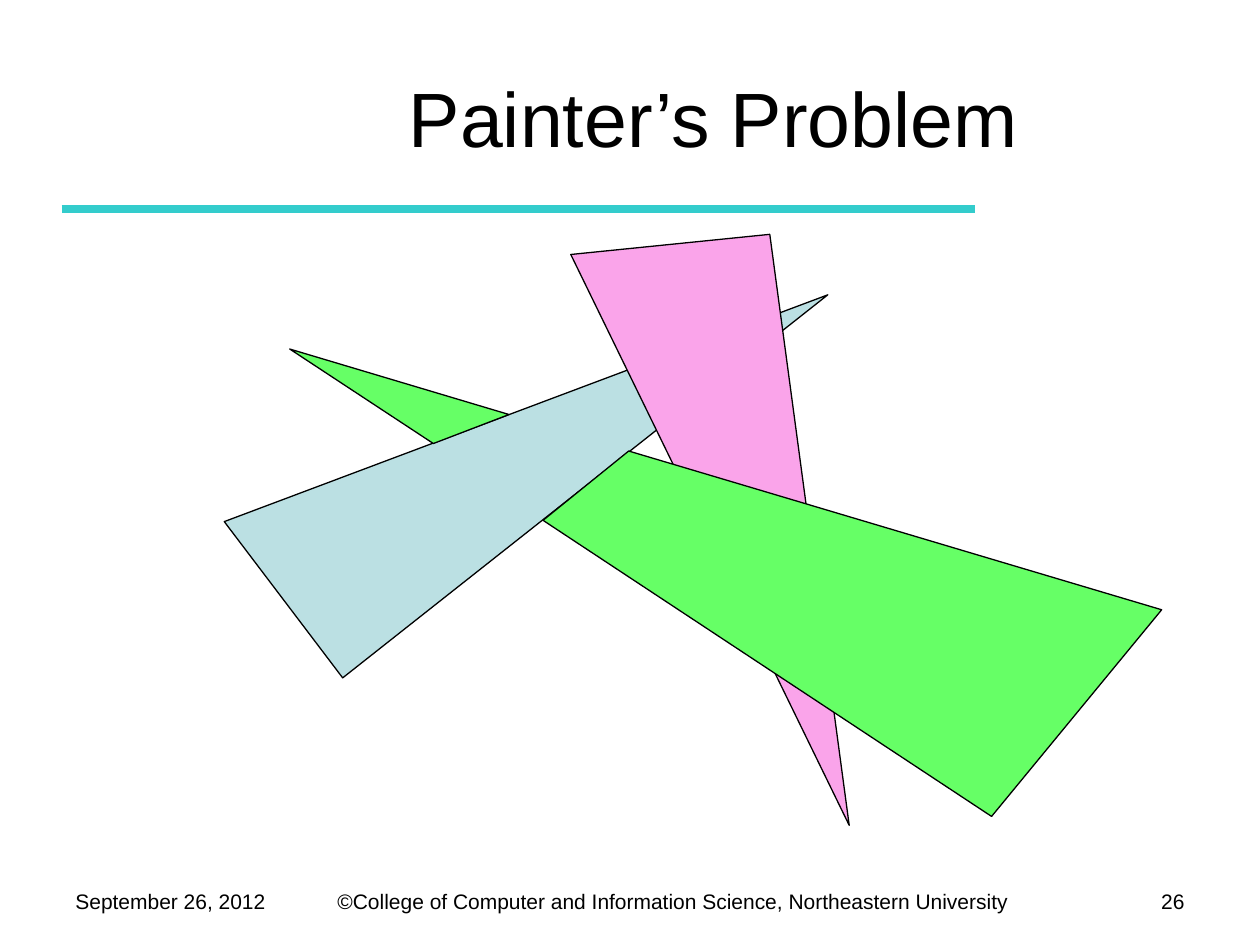
from dataclasses import dataclass

from pptx import Presentation
from pptx import util as u
from pptx.dml.color import RGBColor
from pptx.enum import shapes, text
from pptx.oxml.ns import qn
from lxml import etree

WIDTH, HEIGHT = u.Inches(10), u.Inches(7.5)
COLUMN, ROW = WIDTH / 10, HEIGHT / 7.5
BLACK, TEAL = "000000", "33CCCC"
BLUE, PINK, GREEN = "BBE0E3", "FAA4EA", "66FF66"
ALIGN, ANCHOR = text.PP_ALIGN, text.MSO_ANCHOR


@dataclass
class Label:
    words: str
    left: float
    top: float
    width: float
    height: float
    size: int = 12
    align: ALIGN = ALIGN.LEFT
    anchor: ANCHOR = ANCHOR.TOP


@dataclass
class Polygon:
    fill: str
    points: list[tuple[float, float]]


LABELS = [
    Label("Painter’s Problem", 1.83, 0.3, 7.67, 1.25, 44, ALIGN.CENTER, ANCHOR.MIDDLE),
    Label("September 26, 2012", 0.5, 7, 1.75, 0.33),
    Label("©College of Computer and Information Science, Northeastern University",
          2.58, 7, 5.66, 0.3),
    Label("26", 8.67, 7, 0.83, 0.35, align=ALIGN.RIGHT),
]

# Back to front; the green triangle is split in two so that the overlap is cyclic.
POLYGONS = [
    Polygon(BLUE, [(1.78, 4.14), (2.72, 5.38), (6.57, 2.34)]),
    Polygon(PINK, [(4.53, 2.02), (6.74, 6.55), (6.11, 1.86)]),
    Polygon(GREEN, [(7.87, 6.48), (9.22, 4.84), (4.99, 3.58), (4.31, 4.13)]),
    Polygon(GREEN, [(3.44, 3.52), (4.04, 3.29), (2.3, 2.77)]),
]


def color(value: str) -> RGBColor:
    return RGBColor.from_string(value)


def at(column: float, row: float) -> tuple[int, int]:
    """Turn a grid position or extent into slide units."""
    return round(column * COLUMN), round(row * ROW)


def add_label(s, label: Label) -> None:
    box = s.shapes.add_textbox(*at(label.left, label.top), *at(label.width, label.height))
    tf = box.text_frame
    tf.word_wrap = True
    tf.vertical_anchor = label.anchor
    p = tf.paragraphs[0]
    p.text = label.words
    p.alignment = label.align
    p.font.name = "Arial"
    p.font.size = u.Pt(label.size)
    p.font.color.rgb = color(BLACK)


def add_polygon(s, polygon: Polygon) -> None:
    start, *rest = (at(*point) for point in polygon.points)
    builder = s.shapes.build_freeform(*start)
    builder.add_line_segments(rest, close=True)
    sp = builder.convert_to_shape()
    sp.shadow.inherit = False
    sp.fill.solid()
    sp.fill.fore_color.rgb = color(polygon.fill)
    sp.line.color.rgb = color(BLACK)
    sp.line.width = u.Pt(0.75)


def add_rule(s, left: float, right: float, row: float) -> None:
    line = s.shapes.add_connector(
        shapes.MSO_CONNECTOR.STRAIGHT, *at(left, row), *at(right, row))
    line.line.color.rgb = color(TEAL)
    line.line.width = u.Pt(4.5)
    etree.SubElement(line._element.spPr, qn("a:effectLst"))


def main() -> None:
    prs = Presentation()
    prs.slide_width, prs.slide_height = WIDTH, HEIGHT
    s = prs.slides.add_slide(prs.slide_layouts[6])
    add_rule(s, 0.49, 7.74, 1.66)
    for label in LABELS:
        add_label(s, label)
    for polygon in POLYGONS:
        add_polygon(s, polygon)
    prs.save("out.pptx")


if __name__ == "__main__":
    main()
